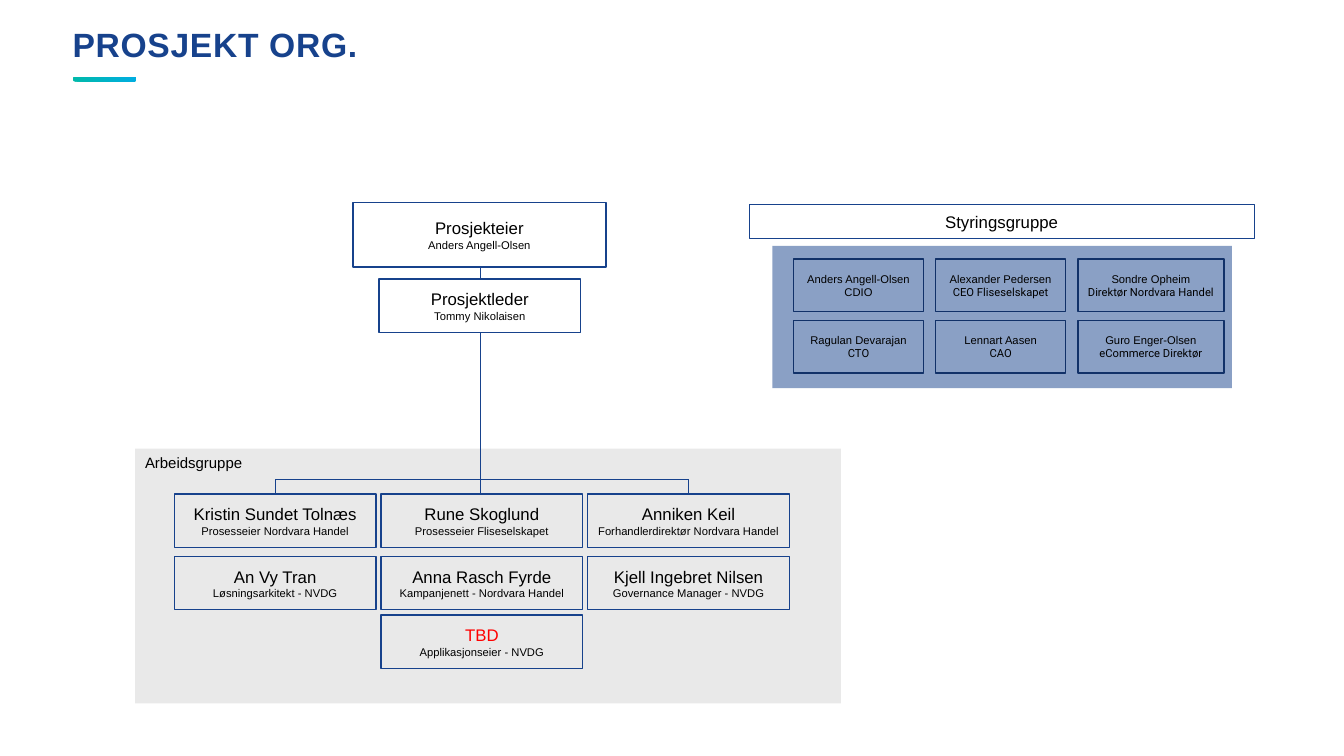
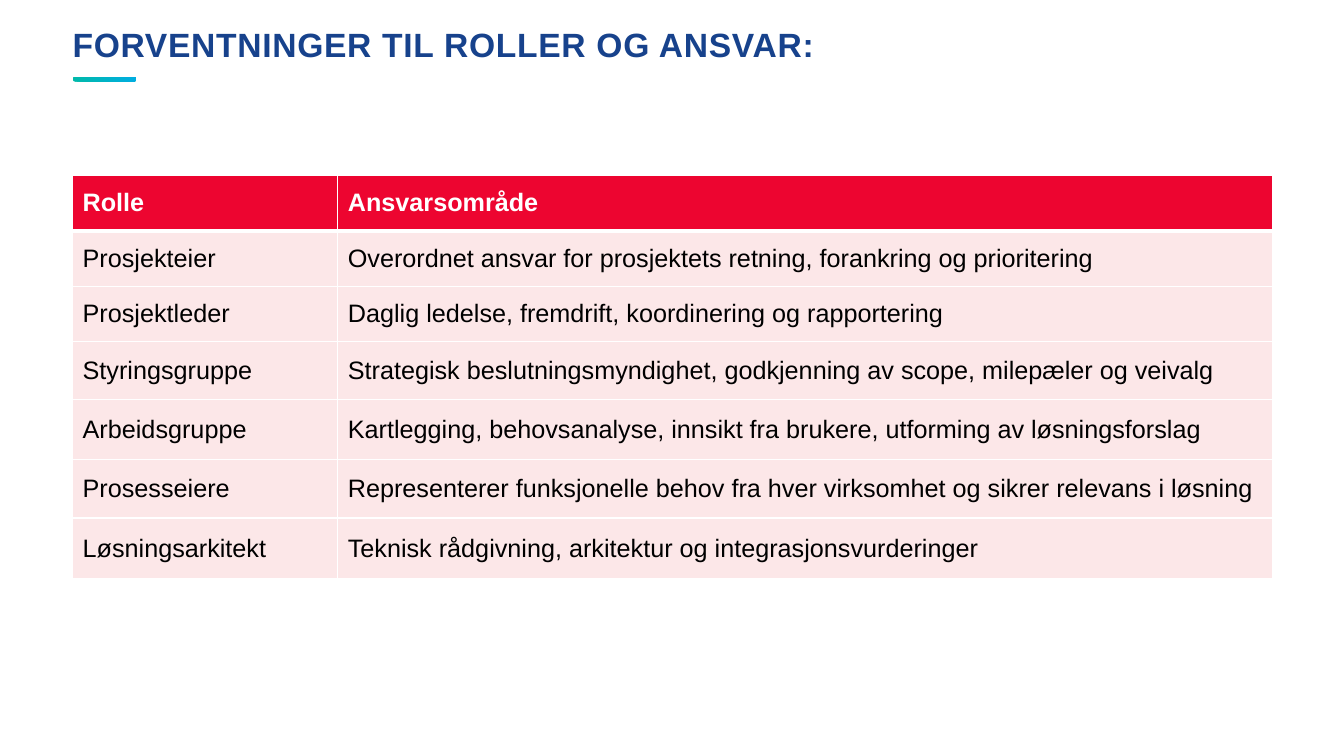
from lxml.etree import SubElement
from pptx import Presentation
from pptx.dml.color import RGBColor
from pptx.enum.shapes import MSO_CONNECTOR, MSO_SHAPE
from pptx.enum.text import MSO_ANCHOR, PP_ALIGN
from pptx.oxml.ns import qn
from pptx.util import Inches, Pt

HEX = {"navy": "17428C", "deep": "113168", "grey": "BFBFBF", "black": "000000",
       "white": "FFFFFF", "red": "FF0000", "head": "ED0530", "body": "FCE7E8",
       "teal": "00B9AA", "sky": "00ADE1"}
SANS, ALT = "Arial", "Roboto"
LEFT, WIDE = 0.72, 11.9

OWNER = ("Prosjekteier", "Anders Angell-Olsen")
LEADER = ("Prosjektleder", "Tommy Nikolaisen")
BOARD = [
    [("Anders Angell-Olsen", "CDIO", SANS),
     ("Alexander Pedersen", "CEO Fliseselskapet", ALT),
     ("Sondre Opheim", "Direktør Nordvara Handel", ALT)],
    [("Ragulan Devarajan", "CTO", ALT),
     ("Lennart Aasen", "CAO", ALT),
     ("Guro Enger-Olsen", "eCommerce Direktør", ALT)],
]
TEAM = [
    [("Kristin Sundet Tolnæs", "Prosesseier Nordvara Handel"),
     ("Rune Skoglund", "Prosesseier Fliseselskapet"),
     ("Anniken Keil", "Forhandlerdirektør Nordvara Handel")],
    [("An Vy Tran", "Løsningsarkitekt - NVDG"),
     ("Anna Rasch Fyrde", "Kampanjenett - Nordvara Handel"),
     ("Kjell Ingebret Nilsen", "Governance Manager - NVDG")],
    [None, ("TBD", "Applikasjonseier - NVDG"), None],
]
ROLES = [
    ("Rolle", "Ansvarsområde"),
    ("Prosjekteier", "Overordnet ansvar for prosjektets retning, forankring og prioritering"),
    ("Prosjektleder", "Daglig ledelse, fremdrift, koordinering og rapportering"),
    ("Styringsgruppe", "Strategisk beslutningsmyndighet, godkjenning av scope, milepæler og veivalg"),
    ("Arbeidsgruppe", "Kartlegging, behovsanalyse, innsikt fra brukere, utforming av løsningsforslag"),
    ("Prosesseiere", "Representerer funksjonelle behov fra hver virksomhet og sikrer relevans i løsning"),
    ("Løsningsarkitekt", "Teknisk rådgivning, arkitektur og integrasjonsvurderinger"),
]
COLS = (2.63, 9.27)
ROWS = (0.55, 0.55, 0.55, 0.57, 0.6, 0.58, 0.6)


def rgb(name):
    return RGBColor.from_string(HEX[name])


def write(para, text, size, font=SANS, color="black", bold=False):
    run = para.add_run()
    run.text = text
    face = run.font
    face.size, face.name, face.bold = Pt(size), font, bold
    face.color.rgb = rgb(color)
    return run


def fade(shape, share):
    """Make the solid fill partly transparent."""
    tint = shape.fill._xPr.find(qn("a:solidFill"))[0]
    SubElement(tint, qn("a:alpha"), val=str(share * 1000))


def box(slide, at, lines=(), line=None, width=1, fill=None, alpha=100):
    """Draw a rectangle with centred lines of (text, size, font, colour)."""
    shape = slide.shapes.add_shape(MSO_SHAPE.RECTANGLE, *map(Inches, at))
    shape.shadow.inherit = False
    if fill:
        shape.fill.solid()
        shape.fill.fore_color.rgb = rgb(fill)
        fade(shape, alpha)
    else:
        shape.fill.background()
    if line:
        shape.line.color.rgb = rgb(line)
        shape.line.width = Pt(width)
    else:
        shape.line.fill.background()
    frame = shape.text_frame
    frame.word_wrap = True
    frame.vertical_anchor = MSO_ANCHOR.MIDDLE
    frame.margin_left = frame.margin_right = Inches(0.03)
    for i, part in enumerate(lines):
        para = frame.add_paragraph() if i else frame.paragraphs[0]
        para.alignment = PP_ALIGN.CENTER
        write(para, *part)
    return shape


def card(slide, at, name, role):
    color = "red" if name == "TBD" else "black"
    box(slide, at, [(name, 12, SANS, color), (role, 8)], "navy")


def link(slide, *ends):
    wire = slide.shapes.add_connector(MSO_CONNECTOR.STRAIGHT, *map(Inches, ends))
    wire.line.color.rgb = rgb("navy")
    wire.line.width = Pt(0.5)
    SubElement(wire._element.spPr, qn("a:effectLst"))


def start(deck, title):
    """Add a blank slide with the shared title and accent bar."""
    slide = deck.slides.add_slide(deck.slide_layouts[6])
    bar = slide.shapes.add_shape(
        MSO_SHAPE.ROUNDED_RECTANGLE, *map(Inches, (LEFT, 0.76, 0.63, 0.05)))
    bar.shadow.inherit = False
    bar.adjustments[0] = 0.5
    bar.line.fill.background()
    bar.fill.gradient()
    bar.fill.gradient_angle = 0
    for stop, name, spot in zip(bar.fill.gradient_stops, ("teal", "sky"), (0, 1)):
        stop.color.rgb, stop.position = rgb(name), spot
    frame = slide.shapes.add_textbox(*map(Inches, (LEFT, 0.24, WIDE, 0.4))).text_frame
    frame.word_wrap = True
    frame.vertical_anchor = MSO_ANCHOR.MIDDLE
    frame.margin_left = frame.margin_right = frame.margin_top = frame.margin_bottom = 0
    run = write(frame.paragraphs[0], title, 24, color="navy", bold=True)
    run._r.get_or_add_rPr().set("spc", "50")
    return slide


def chart_org(deck):
    slide = start(deck, "PROSJEKT ORG.")

    group = box(slide, (1.34, 4.45, 7, 2.53), [("Arbeidsgruppe", 10.7)],
                fill="grey", alpha=34)
    frame = group.text_frame
    frame.vertical_anchor = MSO_ANCHOR.TOP
    frame.margin_left = Inches(0.1)
    frame.paragraphs[0].alignment = PP_ALIGN.LEFT

    wide, high, step, left = 2, 0.53, 2.05, 1.73
    tops = (4.9, 5.52, 6.1)
    mids = [left + step * i + wide / 2 for i in range(3)]
    axis, rail = 4.76, 4.76
    link(slide, axis, 2.65, axis, 2.77)
    link(slide, axis, 3.3, axis, tops[0])
    link(slide, mids[0], rail, mids[2], rail)
    for mid in (mids[0], mids[2]):
        link(slide, mid, rail, mid, tops[0])

    card(slide, (3.5, 2.01, 2.51, 0.64), *OWNER)
    card(slide, (3.76, 2.77, wide, high), *LEADER)
    for top, row in zip(tops, TEAM):
        for mid, who in zip(mids, row):
            if who:
                card(slide, (mid - wide / 2, top, wide, high), *who)

    box(slide, (7.43, 2.03, 5.01, 0.34), [("Styringsgruppe", 12)], "navy", 0.75)
    box(slide, (7.66, 2.44, 4.56, 1.41), fill="navy", alpha=50)
    for r, row in enumerate(BOARD):
        for c, (name, role, font) in enumerate(row):
            at = (7.87 + 1.41 * c, 2.57 + 0.61 * r, 1.45 if c == 2 else 1.29, 0.52)
            box(slide, at, [(name, 8), (role, 8, font)], "deep")


def edge(cell, **sides):
    """Draw white borders; widths are in points, keyed L, R, T, B."""
    props = cell._tc.get_or_add_tcPr()
    for side, width in sides.items():
        rule = SubElement(props, qn("a:ln" + side), w=str(Pt(width)))
        paint = SubElement(rule, qn("a:solidFill"))
        SubElement(paint, qn("a:srgbClr"), val=HEX["white"])


def table_roles(deck):
    slide = start(deck, "FORVENTNINGER TIL ROLLER OG ANSVAR:")
    at = map(Inches, (LEFT, 1.74, WIDE, sum(ROWS)))
    table = slide.shapes.add_table(len(ROWS), len(COLS), *at).table
    for col, width in zip(table.columns, COLS):
        col.width = Inches(width)
    for r, (row, high) in enumerate(zip(ROLES, ROWS)):
        table.rows[r].height = Inches(high)
        top = r == 0
        for c, text in enumerate(row):
            cell = table.cell(r, c)
            edge(cell, L=1, R=1, T=3 if r == 1 else 1, B=3 if top else 1)
            cell.fill.solid()
            cell.fill.fore_color.rgb = rgb("head" if top else "body")
            cell.vertical_anchor = MSO_ANCHOR.MIDDLE
            write(cell.text_frame.paragraphs[0], text, 18,
                  color="white" if top else "black", bold=top)


def main():
    deck = Presentation()
    deck.slide_width, deck.slide_height = Inches(13.33), Inches(7.5)
    chart_org(deck)
    table_roles(deck)
    deck.save("out.pptx")


if __name__ == "__main__":
    main()
